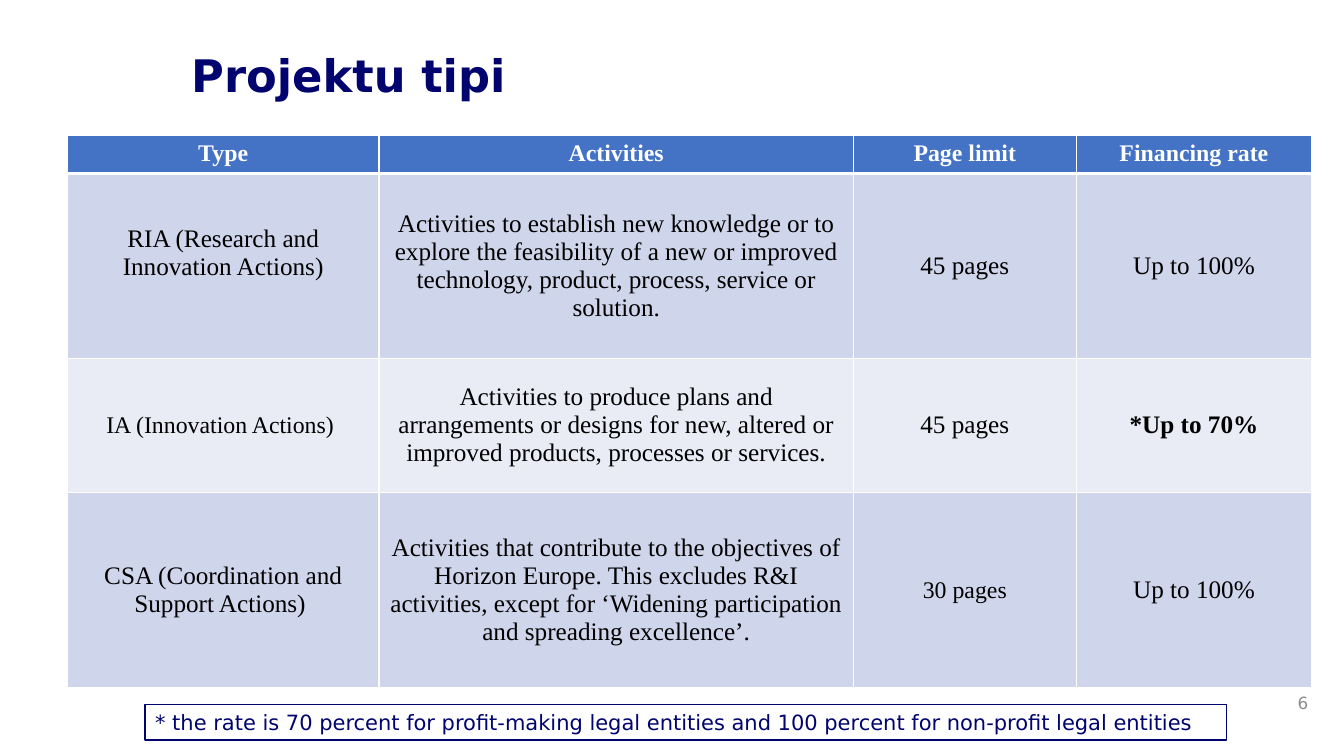
import pptx
import pptx.util
import pptx.dml.color
import pptx.enum.shapes
import pptx.enum.text
from lxml import etree

Cm, Pt = pptx.util.Cm, pptx.util.Pt
RGBColor = pptx.dml.color.RGBColor
ANCHOR = pptx.enum.text.MSO_ANCHOR
ALIGN = pptx.enum.text.PP_ALIGN

NAVY = RGBColor(0x01, 0x04, 0x6E)
GREY = RGBColor(0x8C, 0x8C, 0x8C)
WHITE = RGBColor(0xFF, 0xFF, 0xFF)
BLACK = RGBColor(0, 0, 0)
HEADER = RGBColor(0x44, 0x72, 0xC4)
BAND_DARK = RGBColor(0xCF, 0xD5, 0xEA)
BAND_LIGHT = RGBColor(0xE9, 0xEB, 0xF5)
SANS, SERIF = "DejaVu Sans", "Times New Roman"
A = "http://schemas.openxmlformats.org/drawingml/2006/main"


def write(tf, text, size, font=SANS, color=NAVY, bold=False, align=ALIGN.LEFT,
          anchor=ANCHOR.TOP, spacing=1.0):
    tf.word_wrap = True
    tf.vertical_anchor = anchor
    p = tf.paragraphs[0]
    p.alignment = align
    p.line_spacing = spacing
    r = p.add_run()
    r.text = text
    r.font.name, r.font.size, r.font.bold = font, Pt(size), bold
    r.font.color.rgb = color


def set_borders(cell, bottom):
    # Borders must come before the fill in the cell properties
    tcPr = cell._tc.get_or_add_tcPr()
    for side, width in (("L", 1), ("R", 1), ("T", 1), ("B", bottom)):
        ln = etree.SubElement(tcPr, f"{{{A}}}ln{side}", w=str(Pt(width)))
        fill = etree.SubElement(ln, f"{{{A}}}solidFill")
        etree.SubElement(fill, f"{{{A}}}srgbClr", val=str(WHITE))


prs = pptx.Presentation()
prs.slide_width, prs.slide_height = Cm(33.87), Cm(19.05)
s = prs.slides.add_slide(prs.slide_layouts[6])

# Slide number
sp = s.shapes.add_textbox(Cm(25.6), Cm(17.2), Cm(7.62), Cm(1.02))
write(sp.text_frame, "6", 12, color=GREY, align=ALIGN.RIGHT, anchor=ANCHOR.MIDDLE)

# Title
sp = s.shapes.add_textbox(Cm(4.57), Cm(1.22), Cm(16.94), Cm(2.87))
write(sp.text_frame, "Projektu tipi", 32, bold=True, spacing=0.9)

# Table of project types
rows = [
    ("Type", "Activities", "Page limit", "Financing rate"),
    ("RIA (Research and Innovation Actions)",
     "Activities to establish new knowledge or to explore the feasibility of a new "
     "or improved technology, product, process, service or solution.",
     "45 pages", "Up to 100%"),
    ("IA (Innovation Actions) ",
     "Activities to produce plans and arrangements or designs for new, altered or "
     "improved products, processes or services.",
     "45 pages", "*Up to 70%"),
    ("CSA (Coordination and Support Actions) ",
     "Activities that contribute to the objectives of Horizon Europe. This excludes "
     "R&I activities, except for ‘Widening participation and spreading excellence’.",
     "30 pages", "Up to 100%"),
]
col_widths = [7.85, 11.96, 5.61, 5.94]
row_heights = [0.91, 4.65, 3.38, 4.93]
smaller_cells = {(2, 0), (3, 2)}

table = s.shapes.add_table(len(rows), len(col_widths), Cm(1.7), Cm(3.4),
                           Cm(sum(col_widths)), Cm(sum(row_heights))).table
for column, width in zip(table.columns, col_widths):
    column.width = Cm(width)
for i, (texts, height) in enumerate(zip(rows, row_heights)):
    table.rows[i].height = Cm(height)
    head = i == 0
    for j, text in enumerate(texts):
        cell = table.cell(i, j)
        set_borders(cell, 3 if head else 1)
        cell.fill.solid()
        cell.fill.fore_color.rgb = HEADER if head else BAND_DARK if i % 2 else BAND_LIGHT
        cell.vertical_anchor = ANCHOR.TOP if head else ANCHOR.MIDDLE
        write(cell.text_frame, text, 17 if head or (i, j) in smaller_cells else 18,
              font=SERIF, color=WHITE if head else BLACK,
              bold=head or text.startswith("*"), align=ALIGN.CENTER,
              anchor=None)
table.cell(1, 0).margin_bottom = Cm(0.8)

# Footnote
sp = s.shapes.add_shape(pptx.enum.shapes.MSO_SHAPE.RECTANGLE,
                        Cm(3.66), Cm(17.75), Cm(27.25), Cm(0.9))
sp.shadow.inherit = False
sp.fill.background()
sp.line.color.rgb = NAVY
sp.line.width = Pt(1)
write(sp.text_frame, "* the rate is 70 percent for profit-making legal entities "
      "and 100 percent for non-profit legal entities", 15)

prs.save("out.pptx")
